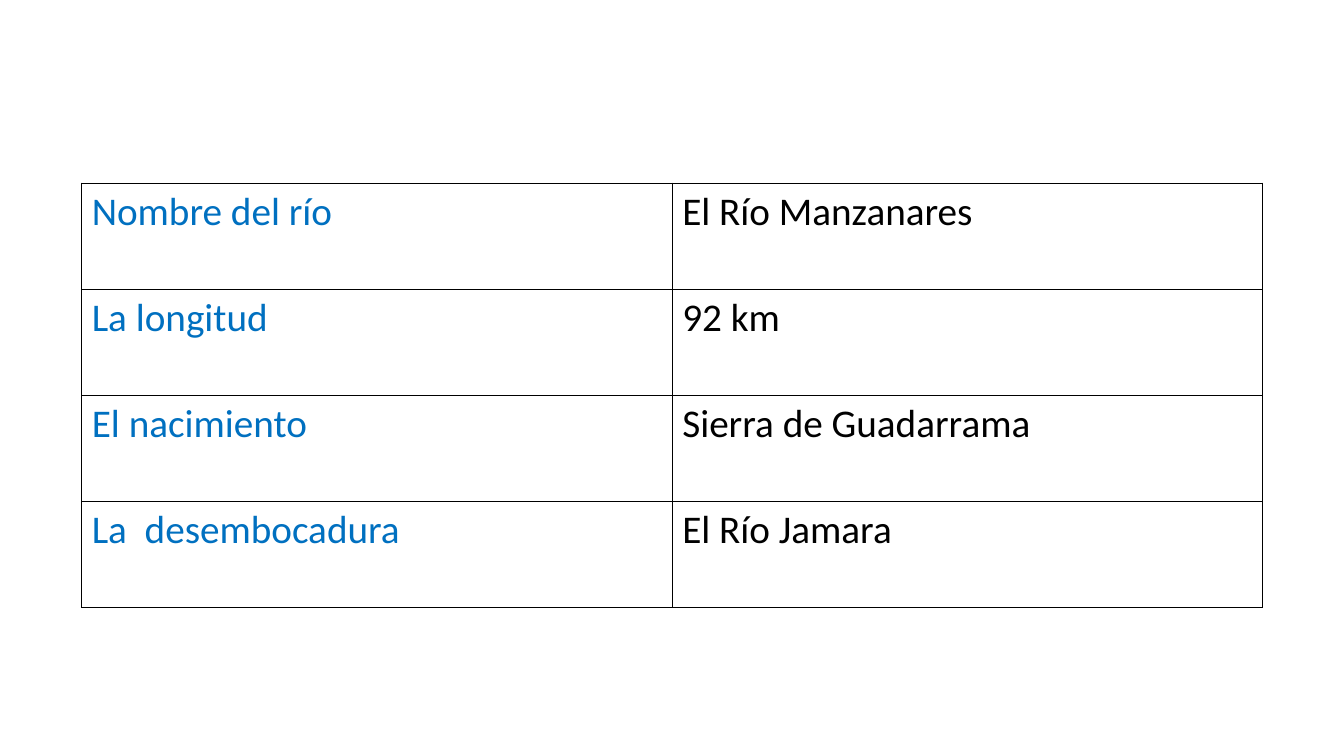
from dataclasses import dataclass

from lxml import etree
from pptx import Presentation
from pptx import util as u
from pptx.dml.color import RGBColor
from pptx.oxml import ns


@dataclass(frozen=True)
class Theme:
    font: str = "Calibri"
    size: int = 28
    label: str = "0070C0"
    value: str = "000000"
    border: str = "000000"
    border_width: int = 1
    background: str = "FFFFFF"


THEME = Theme()

RIVER_FACTS = [
    ("Nombre del río", "El Río Manzanares"),
    ("La longitud", "92 km"),
    ("El nacimiento", "Sierra de Guadarrama"),
    ("La  desembocadura", "El Río Jamara"),
]


def write_text(frame, text, *, color, size=THEME.size, font=THEME.font):
    span = frame.paragraphs[0].add_run()
    span.text = text
    span.font.name = font
    span.font.size = u.Pt(size)
    span.font.color.rgb = RGBColor.from_string(color)


def add_borders(cell):
    """Draw all four sides; call before filling, as lines precede the fill in the XML."""
    properties = cell._tc.get_or_add_tcPr()
    for side in ("lnL", "lnR", "lnT", "lnB"):
        line = etree.SubElement(properties, ns.qn(f"a:{side}"),
                                w=str(u.Pt(THEME.border_width)))
        fill = etree.SubElement(line, ns.qn("a:solidFill"))
        etree.SubElement(fill, ns.qn("a:srgbClr"), val=THEME.border)


def format_cell(cell, text, color):
    add_borders(cell)
    cell.fill.solid()
    cell.fill.fore_color.rgb = RGBColor.from_string(THEME.background)
    write_text(cell.text_frame, text, color=color)


def add_fact_table(page, facts, left, top, column_width, row_height):
    frame = page.shapes.add_table(len(facts), 2, left, top,
                                  column_width * 2, row_height * len(facts))
    table = frame.table
    table.first_row = False
    table.horz_banding = False
    for row, fact in zip(table.rows, facts):
        for cell, text, color in zip(row.cells, fact, (THEME.label, THEME.value)):
            format_cell(cell, text, color)


def main():
    deck = Presentation()
    deck.slide_width = u.Cm(33.87)
    deck.slide_height = u.Cm(19.05)
    page = deck.slides.add_slide(deck.slide_layouts[6])
    add_fact_table(page, RIVER_FACTS, left=u.Cm(2.06), top=u.Cm(4.62),
                   column_width=u.Cm(14.88), row_height=u.Cm(2.67))
    deck.save("out.pptx")


if __name__ == "__main__":
    main()
